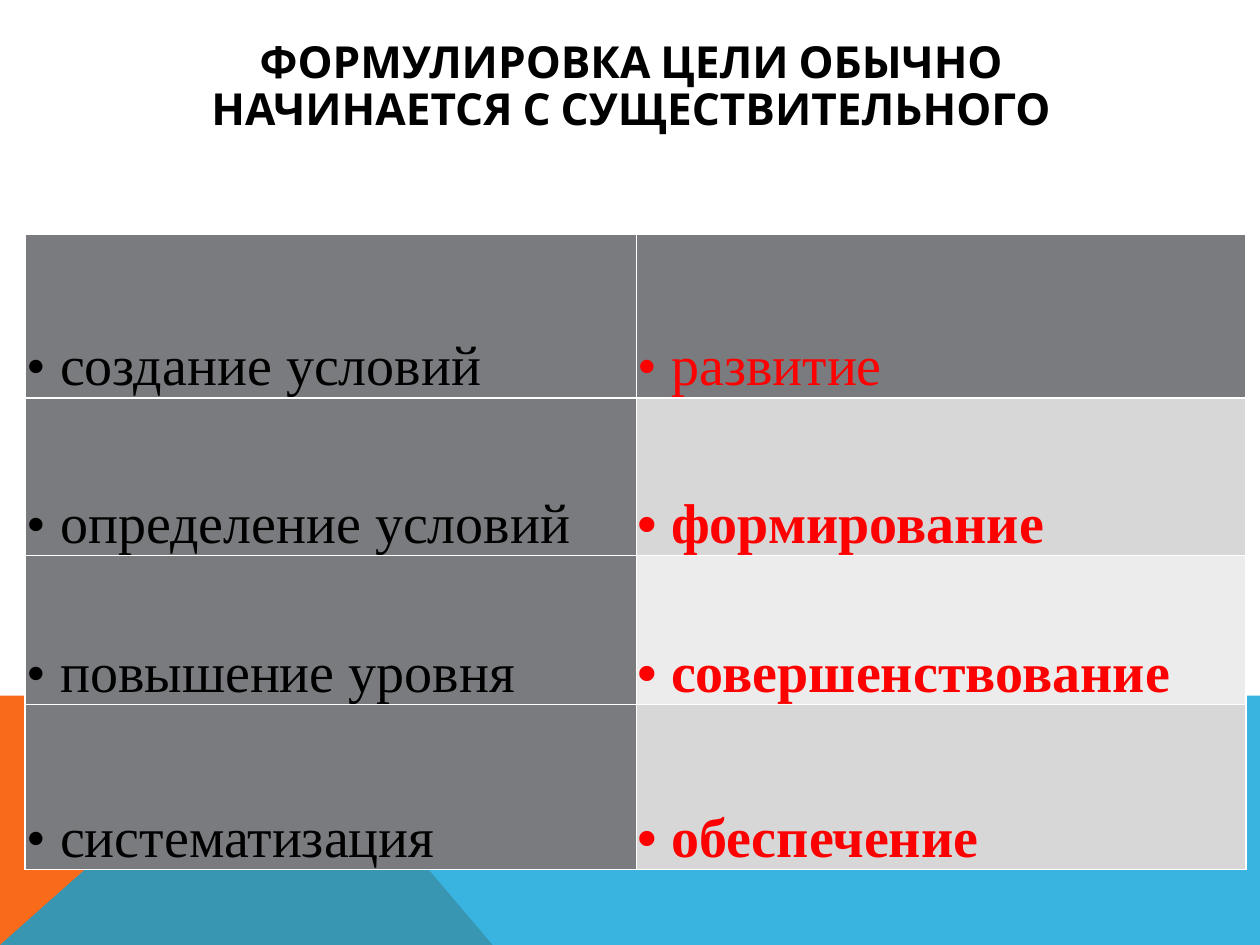
from lxml import etree
from pptx import Presentation
from pptx.dml.color import RGBColor
from pptx.enum.text import MSO_ANCHOR, PP_ALIGN
from pptx.oxml.ns import qn
from pptx.util import Inches, Pt

MIDDLE, BOTTOM = MSO_ANCHOR.MIDDLE, MSO_ANCHOR.BOTTOM
CENTER = PP_ALIGN.CENTER
COLORS = {
    "black": "000000", "white": "FFFFFF", "red": "FF0000",
    "orange": "F96A1B", "blue": "08A1D9",
    "dark": "797B7E", "band": "D7D7D8", "light": "ECECEC",
}


def add_text(para, text, font, size, color, bold):
    span = para.add_run()
    span.text = text
    span.font.name = font
    span.font.size = Pt(size)
    span.font.bold = bold
    span.font.color.rgb = RGBColor.from_string(COLORS[color])


def add_borders(cell):
    props = cell._tc.get_or_add_tcPr()
    for index, side in enumerate(("lnL", "lnR", "lnT", "lnB")):
        line = etree.Element(qn(f"a:{side}"), w=str(Pt(1)))
        fill = etree.SubElement(line, qn("a:solidFill"))
        etree.SubElement(fill, qn("a:srgbClr"), val=COLORS["white"])
        props.insert(index, line)


deck = Presentation()
deck.slide_width, deck.slide_height = Inches(10), Inches(7.5)
page = deck.slides.add_slide(deck.slide_layouts[6])

# Bottom decoration: orange wedge under a translucent blue band
wedges = [
    ("orange", 100, [(0, 7.5), (0, 5.52), (2.23, 5.52), (3.91, 7.5)]),
    ("blue", 80, [(0, 7.5), (2.23, 5.52), (10, 5.52), (10, 7.5)]),
]
for color, opacity, points in wedges:
    corners = [(Inches(x), Inches(y)) for x, y in points]
    builder = page.shapes.build_freeform(*corners[0], scale=1.0)
    builder.add_line_segments(corners[1:], close=True)
    wedge = builder.convert_to_shape()
    wedge.shadow.inherit = False
    wedge.line.fill.background()
    wedge.fill.solid()
    wedge.fill.fore_color.rgb = RGBColor.from_string(COLORS[color])
    if opacity < 100:
        tint = wedge._element.spPr.find(qn("a:solidFill"))[0]
        etree.SubElement(tint, qn("a:alpha"), val=str(opacity * 1000))

# Title
box = page.shapes.add_textbox(Inches(0.9), Inches(0.4), Inches(8.22), Inches(0.6))
box.text_frame.word_wrap = True
box.text_frame.vertical_anchor = MIDDLE
para = box.text_frame.paragraphs[0]
para.alignment = CENTER
para.line_spacing = 0.87
add_text(para, "ФОРМУЛИРОВКА ЦЕЛИ ОБЫЧНО НАЧИНАЕТСЯ С СУЩЕСТВИТЕЛЬНОГО",
         "Cabin", 25.2, "black", True)

# Table of nouns: row height, line spacing, left word, right word, right fill
rows = [
    (1.3, 10, "создание условий", "развитие", "dark"),
    (1.25, 10, "определение условий", "формирование", "band"),
    (1.18, 9.5, "повышение уровня", "совершенствование", "light"),
    (1.31, 9.5, "систематизация", "обеспечение", "band"),
]
table = page.shapes.add_table(len(rows), 2, Inches(0.2), Inches(1.86),
                              Inches(9.69), Inches(5.04)).table
for column, width in zip(table.columns, (4.85, 4.84)):
    column.width = Inches(width)

for index, (height, spacing, left, right, right_fill) in enumerate(rows):
    table.rows[index].height = Inches(height)
    sides = [(left, "black", "dark", False), (right, "red", right_fill, index > 0)]
    for side, (word, color, fill, bold) in enumerate(sides):
        cell = table.cell(index, side)
        cell.vertical_anchor = BOTTOM
        cell.margin_left = cell.margin_right = Inches(0.01)
        cell.margin_top = cell.margin_bottom = 0
        cell.fill.solid()
        cell.fill.fore_color.rgb = RGBColor.from_string(COLORS[fill])
        add_borders(cell)
        para = cell.text_frame.paragraphs[0]
        para.line_spacing = Pt(spacing)
        add_text(para, f"• {word}", "Times New Roman", 32, color, bold)

deck.save("out.pptx")
